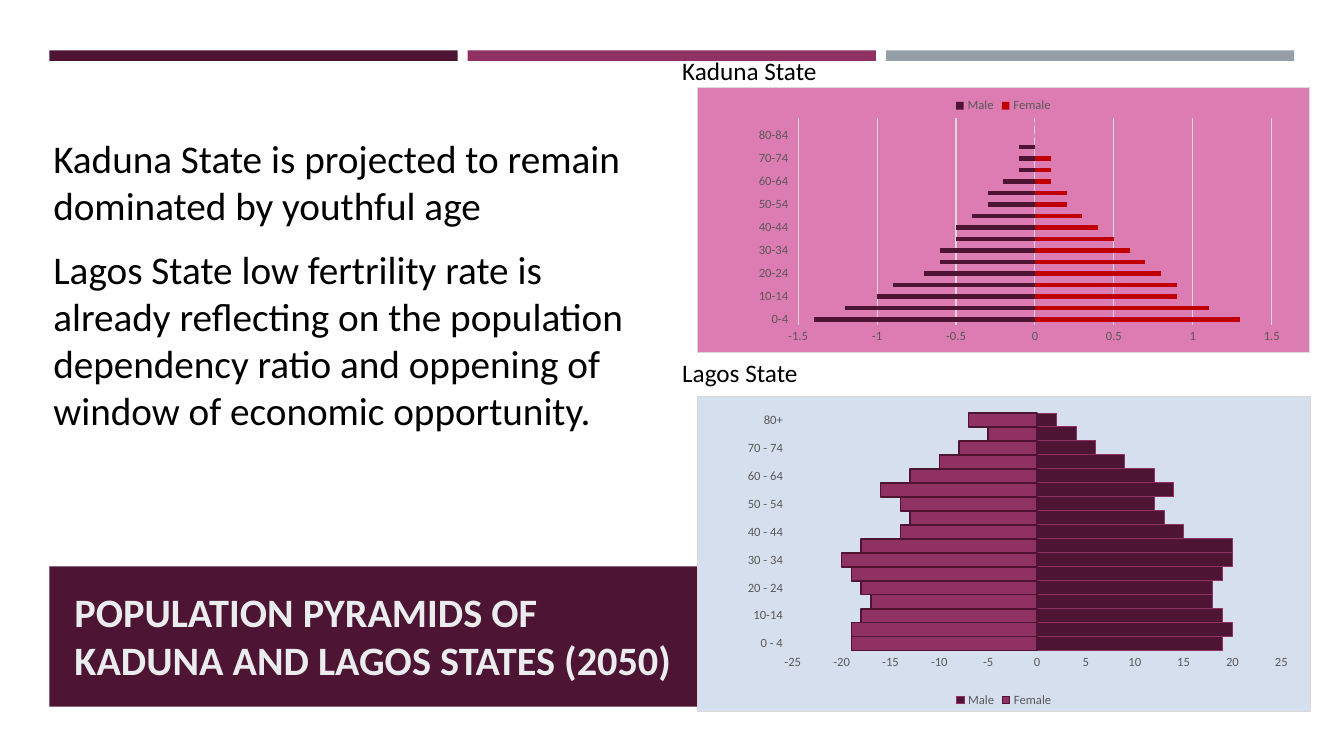
"""Build the slide with the population pyramids of two states."""
from pptx import Presentation
from pptx.chart.data import CategoryChartData
from pptx.dml.color import RGBColor
from pptx.enum.chart import XL_CHART_TYPE, XL_LEGEND_POSITION, XL_TICK_LABEL_POSITION, XL_TICK_MARK
from pptx.enum.shapes import MSO_SHAPE
from pptx.enum.text import MSO_ANCHOR, PP_ALIGN
from pptx.oxml import parse_xml
from pptx.oxml.ns import nsdecls, qn
from pptx.util import Pt

RECT = MSO_SHAPE.RECTANGLE
STACKED = XL_CHART_TYPE.BAR_STACKED
TOP, BOTTOM = XL_LEGEND_POSITION.TOP, XL_LEGEND_POSITION.BOTTOM
LOW, NO_TICK = XL_TICK_LABEL_POSITION.LOW, XL_TICK_MARK.NONE
LEFT = PP_ALIGN.LEFT
AT_TOP, MIDDLE = MSO_ANCHOR.TOP, MSO_ANCHOR.MIDDLE

PLUM, BERRY, RED = "4D1434", "903163", "C00000"
SLATE, PALE, BLACK = "969FA7", "EAECED", "000000"
GREY, RULE = "595959", "D9D9D9"
PINK, BLUE = "DD7CB2", "D6DFEE"


def rgb(hex_text):
    """Return the colour for a hex string."""
    return RGBColor.from_string(hex_text)


def add_text(p, text, size=18, color=BLACK, bold=False, before=0, after=0):
    """Write one formatted run into a paragraph."""
    p.alignment, p.space_before, p.space_after = LEFT, Pt(before), Pt(after)
    r = p.add_run()
    r.text = text
    Deck.style(r.font, size, color)
    r.font.bold = bold


class Deck:
    """Hold the font, the presentation and the current slide."""

    FONT = "Calibri"

    def __init__(self, width, height):
        """Open a title-only slide of the given size."""
        self.prs = Presentation()
        self.prs.slide_width, self.prs.slide_height = Pt(width), Pt(height)
        self.s = self.prs.slides.add_slide(self.prs.slide_layouts[5])

    @classmethod
    def style(cls, font, size, color):
        """Set typeface, size and colour of a font."""
        font.name, font.size = cls.FONT, Pt(size)
        font.color.rgb = rgb(color)

    @staticmethod
    def line(fmt, color, width=0.75):
        """Set colour and width of a line."""
        fmt.line.color.rgb = rgb(color)
        fmt.line.width = Pt(width)

    def bar(self, x, y, w, h, color):
        """Add a plain filled rectangle."""
        sp = self.s.shapes.add_shape(RECT, Pt(x), Pt(y), Pt(w), Pt(h))
        sp.shadow.inherit = False
        sp.fill.solid()
        sp.fill.fore_color.rgb = rgb(color)
        sp.line.fill.background()

    def title(self, x, y, w, h, text, **fmt):
        """Place the title in front of the shapes drawn so far."""
        sp = self.s.shapes.title
        sp.left, sp.top, sp.width, sp.height = Pt(x), Pt(y), Pt(w), Pt(h)
        sp.element.getparent().append(sp.element)
        tf = sp.text_frame
        tf.word_wrap, tf.vertical_anchor = True, MIDDLE
        tf.margin_right = Pt(12)
        add_text(tf.paragraphs[0], text, **fmt)

    def text(self, x, y, w, h, items, inset=3.6):
        """Add a text box with one paragraph per (text, format) item."""
        tf = self.s.shapes.add_textbox(Pt(x), Pt(y), Pt(w), Pt(h)).text_frame
        tf.word_wrap, tf.vertical_anchor = True, AT_TOP
        tf.margin_top = Pt(inset)
        for i, (text, fmt) in enumerate(items):
            p = tf.add_paragraph() if i else tf.paragraphs[0]
            add_text(p, text, **fmt)

    def pyramid(self, x, y, w, h, ages, series, limit, step, fill, plot, legend, gap, grid=False):
        """Add a stacked bar chart with (name, values, colour, outline) series."""
        data = CategoryChartData()
        data.categories = ages
        for name, values, *_ in series:
            data.add_series(name, values)
        chart = self.s.shapes.add_chart(STACKED, Pt(x), Pt(y), Pt(w), Pt(h), data).chart
        chart.has_title = False
        self.style(chart.font, 10, BLACK)
        chart.has_legend = True
        chart.legend.position = legend
        chart.legend.include_in_layout = False
        self.style(chart.legend.font, 9, GREY)

        bars = chart.plots[0]
        bars.gap_width, bars.overlap, bars.vary_by_categories = gap, 100, False
        for ser, (_, _, color, outline) in zip(bars.series, series):
            ser.invert_if_negative = False
            ser.format.fill.solid()
            ser.format.fill.fore_color.rgb = rgb(color)
            if outline:
                self.line(ser.format, *outline)

        cat, val = chart.category_axis, chart.value_axis
        for axis in (cat, val):
            axis.major_tick_mark = axis.minor_tick_mark = NO_TICK
            self.style(axis.tick_labels.font, 9, GREY)
        cat.tick_label_position = LOW
        self.line(cat.format, RULE)
        val.format.line.fill.background()
        val.minimum_scale, val.maximum_scale, val.major_unit = -limit, limit, step
        val.has_major_gridlines = grid
        if grid:
            self.line(val.major_gridlines.format, RULE)
        self.chart_frame(chart, fill, plot)

    @staticmethod
    def chart_frame(chart, fill, plot):
        """Set the chart background, its border and the inner plot position."""
        space = chart.element
        space.find(qn("c:chart")).addnext(parse_xml(
            f'<c:spPr {nsdecls("c", "a")}><a:solidFill><a:srgbClr val="{fill}"/></a:solidFill>'
            f'<a:ln w="{Pt(0.75)}"><a:solidFill><a:srgbClr val="{RULE}"/></a:solidFill></a:ln></c:spPr>'))
        area = space.find(".//" + qn("c:plotArea"))
        for old in area.findall(qn("c:layout")):
            area.remove(old)
        places = "".join(f'<c:{k} val="{v}"/>' for k, v in zip("xywh", plot))
        area.insert(0, parse_xml(
            f'<c:layout {nsdecls("c")}><c:manualLayout><c:layoutTarget val="inner"/>'
            f'<c:xMode val="edge"/><c:yMode val="edge"/>{places}</c:manualLayout></c:layout>'))


KADUNA_AGES = [f"{a}-{a + 4}" for a in range(0, 85, 5)] + [">85"]
KADUNA = [
    ("Male", [-1.4, -1.2, -1, -0.9, -0.7, -0.6, -0.6, -0.5, -0.5,
              -0.4, -0.3, -0.3, -0.2, -0.1, -0.1, -0.1, 0, 0], PLUM, None),
    ("Female", [1.3, 1.1, 0.9, 0.9, 0.8, 0.7, 0.6, 0.5, 0.4,
                0.3, 0.2, 0.2, 0.1, 0.1, 0.1, 0, 0, 0], RED, None),
]
LAGOS_AGES = ["0 - 4", "5-9", "10-14"] + [f"{a} - {a + 4}" for a in range(15, 80, 5)] + ["80+"]
LAGOS = [
    ("Male", [19, 20, 19, 18, 18, 19, 20, 20, 15, 13, 12, 14, 12, 9, 6, 4, 2],
     PLUM, (BERRY, 0.75)),
    ("Female", [-19, -19, -18, -17, -18, -19, -20, -18, -14, -13, -14, -16, -13, -10, -8, -5, -7],
     BERRY, (PLUM, 1)),
]


def main():
    """Build and save the slide."""
    deck = Deck(960, 540)
    for i, color in enumerate((PLUM, BERRY, SLATE)):
        deck.bar(35.3 + 298.8 * i, 36, 291.6, 7.5, color)
    deck.bar(35.3, 404.6, 890, 100.1, PLUM)
    deck.title(46, 427, 455.8, 54, "POPULATION PYRAMIDS OF KADUNA AND LAGOS STATES (2050)",
               size=28.8, color=PALE, bold=True)
    deck.pyramid(497.5, 283, 439.2, 225.4, LAGOS_AGES, LAGOS, 25, 5, BLUE,
                 (0.156, 0.052, 0.796, 0.756), BOTTOM, 0)
    deck.text(31, 46.8, 432, 348.5, [
        ("Kaduna State is projected to remain dominated by youthful age", {"size": 28, "after": 11.6}),
        ("Lagos State low fertrility rate is already reflecting on the population dependency "
         "ratio and oppening of window of economic opportunity.", {"size": 28}),
    ], inset=49.4)
    deck.pyramid(497.5, 61.9, 438.5, 190, KADUNA_AGES, KADUNA, 1.5, 0.5, PINK,
                 (0.165, 0.118, 0.773, 0.781), TOP, 150, grid=True)
    deck.text(480.2, 36, 455.8, 247, [("Kaduna State", {}), ("Lagos State", {"before": 194})])
    deck.prs.save("out.pptx")


if __name__ == "__main__":
    main()
